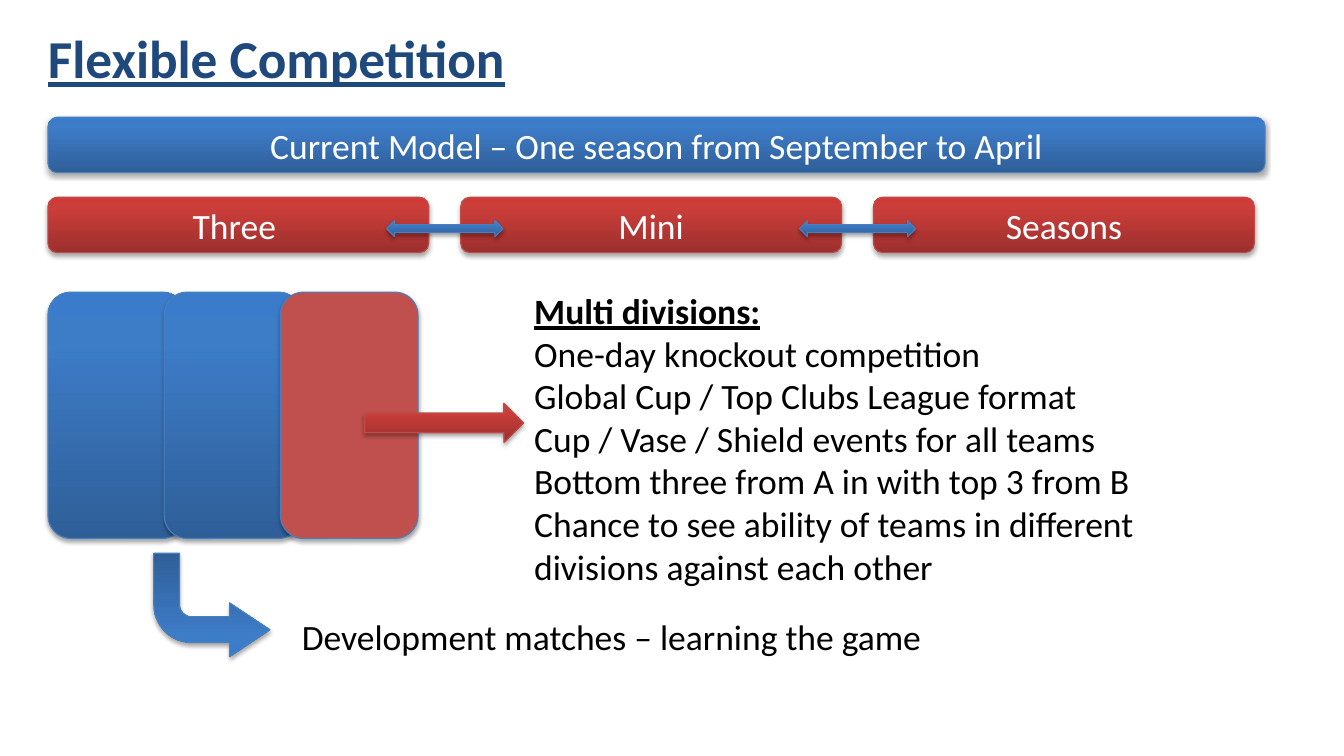
from copy import deepcopy
from dataclasses import dataclass

from pptx import Presentation
from pptx.dml.color import RGBColor
from pptx.enum.shapes import MSO_SHAPE
from pptx.enum.text import MSO_ANCHOR, MSO_AUTO_SIZE, PP_ALIGN
from pptx.oxml import parse_xml
from pptx.oxml.ns import nsdecls, qn
from pptx.util import Pt


@dataclass(frozen=True)
class Theme:
    """Colours, type sizes and line weight of the slide."""
    font: str = "Calibri"
    title_size: int = 36
    body_size: int = 24
    navy: str = "1F497D"
    black: str = "000000"
    white: str = "FFFFFF"
    brick: str = "C0504D"
    blue: tuple = ("2F5F99", "3D7CC7", "3A7CCB")
    red: tuple = ("9C2F2D", "CB3E3A", "CE3B37")
    blue_edge: str = "4B7EBC"
    red_edge: str = "BF4C48"
    stops: tuple = (0, 0.8, 1)
    edge_width: float = 0.75


@dataclass(frozen=True)
class Box:
    """A rectangle in points."""
    left: float
    top: float
    width: float
    height: float

    def lengths(self):
        """Return the four lengths for a python-pptx call."""
        return [Pt(n) for n in (self.left, self.top, self.width, self.height)]


THEME = Theme()


def write(paragraph, text, *, color=THEME.black, size=THEME.body_size,
          bold=False, underline=False, align=PP_ALIGN.LEFT):
    """Put formatted text in a paragraph."""
    paragraph.text = text
    paragraph.alignment = align
    for run in paragraph.runs:
        run.font.name = THEME.font
        run.font.size = Pt(size)
        run.font.bold = bold
        run.font.underline = underline
        run.font.color.rgb = RGBColor.from_string(color)


def add_gradient(shape, colors):
    """Fill a shape with a vertical gradient, first colour at the bottom."""
    shape.fill.gradient()
    shape.fill.gradient_angle = 90
    stop_list = shape._element.spPr.find(".//" + qn("a:gsLst"))
    stop_list.append(deepcopy(stop_list[-1]))
    for stop, position, color in zip(shape.fill.gradient_stops, THEME.stops, colors):
        stop.position = position
        stop.color.rgb = RGBColor.from_string(color)


def add_shadow(shape):
    """Give a shape a soft shadow below it."""
    shape.shadow.inherit = False
    shape._element.spPr.find(qn("a:effectLst")).append(parse_xml(
        f'<a:outerShdw {nsdecls("a")} blurRad="{Pt(3.1)}" dist="{Pt(1.8)}" '
        'dir="5400000" rotWithShape="0"><a:srgbClr val="000000">'
        '<a:alpha val="35000"/></a:srgbClr></a:outerShdw>'))


def add_block(slide, kind, box, fill=THEME.blue, edge=THEME.blue_edge, label=""):
    """Add a shaded shape with an optional centred label."""
    block = slide.shapes.add_shape(kind, *box.lengths())
    if isinstance(fill, tuple):
        add_gradient(block, fill)
    else:
        block.fill.solid()
        block.fill.fore_color.rgb = RGBColor.from_string(fill)
    block.line.color.rgb = RGBColor.from_string(edge)
    block.line.width = Pt(THEME.edge_width)
    add_shadow(block)
    if label:
        block.text_frame.vertical_anchor = MSO_ANCHOR.MIDDLE
        write(block.text_frame.paragraphs[0], label, color=THEME.white,
              align=PP_ALIGN.CENTER)
    return block


def add_lines(slide, box, lines, heading=""):
    """Add a text box with an optional underlined heading above its lines."""
    frame = slide.shapes.add_textbox(*box.lengths()).text_frame
    frame.word_wrap = True
    paragraph = frame.paragraphs[0]
    if heading:
        write(paragraph, heading, bold=True, underline=True)
        paragraph = frame.add_paragraph()
    for index, line in enumerate(lines):
        write(paragraph if index == 0 else frame.add_paragraph(), line)


def set_title(slide, box, text):
    """Place and format the title placeholder."""
    title = slide.shapes.title
    title.left, title.top, title.width, title.height = box.lengths()
    title.text_frame.vertical_anchor = MSO_ANCHOR.TOP
    title.text_frame.auto_size = MSO_AUTO_SIZE.NONE
    write(title.text_frame.paragraphs[0], text, color=THEME.navy,
          size=THEME.title_size, bold=True, underline=True)


def add_seasons(slide, box, names, gap=21.6):
    """Add equal season bars with a two-way arrow across each gap."""
    width = (box.width - gap * (len(names) - 1)) / len(names)
    lefts = [box.left + index * (width + gap) for index in range(len(names))]
    for left, name in zip(lefts, names):
        add_block(slide, MSO_SHAPE.ROUNDED_RECTANGLE,
                  Box(left, box.top, width, box.height),
                  THEME.red, THEME.red_edge, name)
    swap_width, swap_height = 78.5, 10.8
    for left in lefts[1:]:
        add_block(slide, MSO_SHAPE.LEFT_RIGHT_ARROW,
                  Box(left - (gap + swap_width) / 2, box.top + 15.8,
                      swap_width, swap_height))


def add_divisions(slide, box, overlap=14.4):
    """Add three overlapping cards with the arrows that lead out of them."""
    fills = (THEME.blue, THEME.blue, THEME.brick)
    width = (box.width + overlap * (len(fills) - 1)) / len(fills)
    for index, fill in enumerate(fills):
        add_block(slide, MSO_SHAPE.ROUNDED_RECTANGLE,
                  Box(box.left + index * (width - overlap), box.top,
                      width, box.height), fill)

    development_arrow = add_block(
        slide, MSO_SHAPE.BENT_ARROW,
        Box(box.left + 71.3, box.top + box.height + 10, 78.5, 69.8))
    development_arrow.rotation = 180
    development_arrow._element.spPr.find(qn("a:xfrm")).set("flipH", "1")
    for index, ratio in enumerate((0.25, 0.26, 0.39, 0.37)):
        development_arrow.adjustments[index] = ratio

    add_block(slide, MSO_SHAPE.RIGHT_ARROW,
              Box(box.left + box.width - 36, box.top + 75, 107.3, 26.6),
              THEME.red, THEME.red_edge)


def main():
    """Build the slide and save it."""
    deck = Presentation()
    deck.slide_width, deck.slide_height = Pt(907.2), Pt(510.5)
    slide = deck.slides.add_slide(deck.slide_layouts[5])

    set_title(slide, Box(25.2, 13.7, 816.5, 39.6), "Flexible Competition")
    add_block(slide, MSO_SHAPE.ROUNDED_RECTANGLE, Box(32.4, 79.2, 821.5, 37.4),
              label="Current Model – One season from September to April")
    add_seasons(slide, Box(32.4, 133.2, 814.3, 37.4), ("Three ", "Mini", "Seasons"))
    add_divisions(slide, Box(32.4, 197.3, 249.8, 166.3))
    add_lines(slide, Box(196.6, 411.8, 586, 36),
              ["Development matches – learning the game"])
    add_lines(slide, Box(353.5, 191.5, 535.7, 211), [
        "One-day knockout competition",
        "Global Cup / Top Clubs League format",
        "Cup / Vase / Shield events for all teams",
        "Bottom three from A in with top 3 from B",
        "Chance to see ability of teams in different\vdivisions against each other",
    ], heading="Multi divisions:")
    deck.save("out.pptx")


if __name__ == "__main__":
    main()
